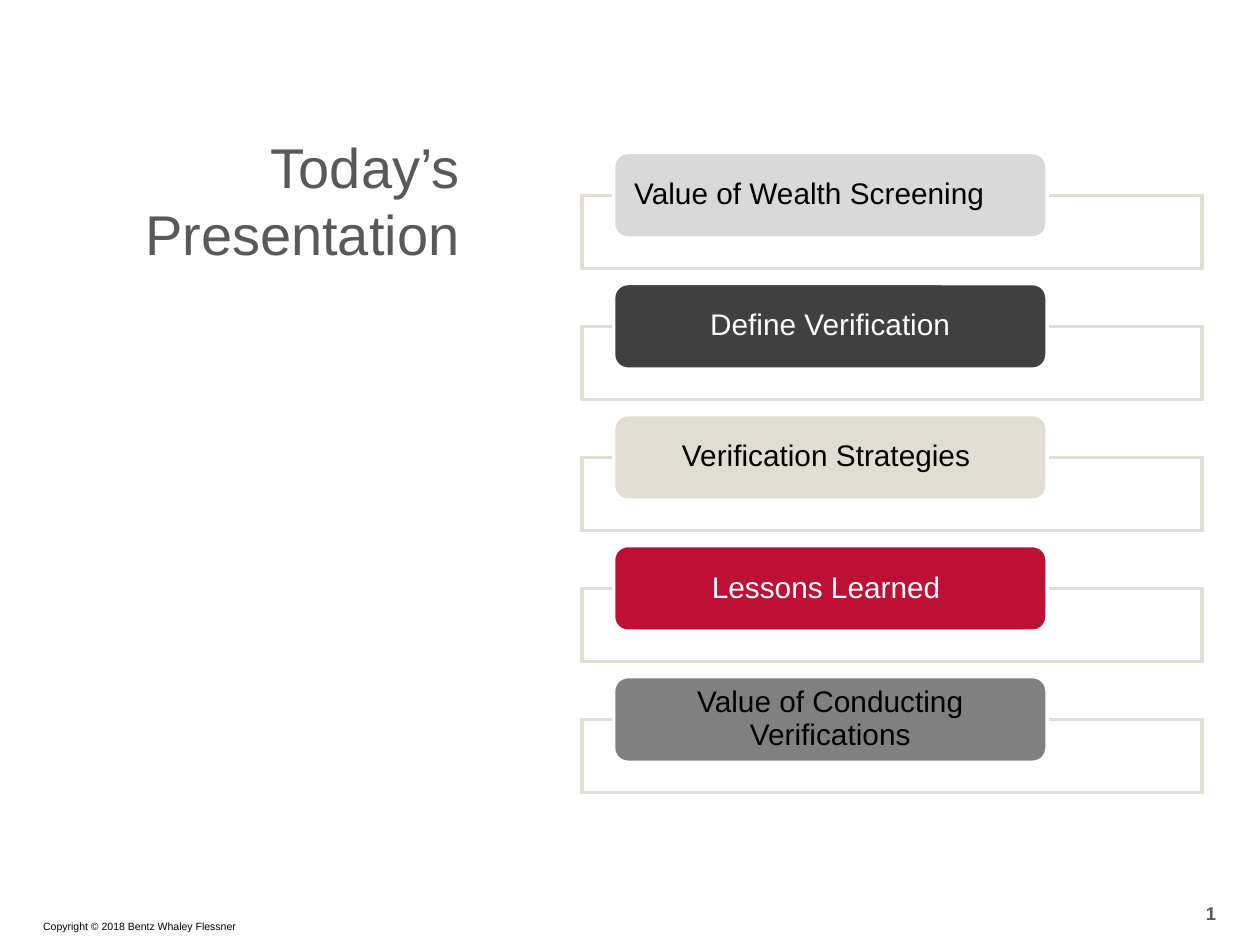
from lxml.etree import SubElement
from pptx import Presentation
from pptx.dml.color import RGBColor
from pptx.enum.shapes import MSO_SHAPE
from pptx.enum.text import MSO_ANCHOR, PP_ALIGN
from pptx.oxml.ns import qn
from pptx.util import Inches, Pt

TITLE = "Today’s Presentation"
COPYRIGHT = "Copyright © 2018 Bentz Whaley Flessner"
NUMBER = "2"
TOPICS = [
    ("Value of Wealth Screening", "silver", "black", PP_ALIGN.LEFT),
    ("Define Verification", "dark", "white", PP_ALIGN.CENTER),
    ("Verification Strategies ", "sand", "black", PP_ALIGN.CENTER),
    ("Lessons Learned ", "red", "white", PP_ALIGN.CENTER),
    ("Value of Conducting Verifications", "gray", "black", PP_ALIGN.CENTER),
]
THEME = {
    "font": "Arial",
    "color": {
        "black": "000000", "white": "FFFFFF", "text": "595959",
        "silver": "D9D9D9", "dark": "404040", "sand": "E1DDD2",
        "red": "BE0F34", "gray": "808080",
    },
    "size": {"title": 32, "topic": 17, "number": 10.5, "small": 6},
}
TOP, STEP = 1.21, 1.04
DROP = 0.34


def color(name):
    return RGBColor.from_string(THEME["color"][name])


def write(shape, text, size, ink="text", align=PP_ALIGN.RIGHT,
          anchor=MSO_ANCHOR.TOP, bold=False, pad=(0.1, 0.05), spacing=None):
    frame = shape.text_frame
    frame.word_wrap = True
    frame.vertical_anchor = anchor
    frame.margin_left = frame.margin_right = Inches(pad[0])
    frame.margin_top = frame.margin_bottom = Inches(pad[1])
    para = frame.paragraphs[0]
    para.alignment = align
    para.line_spacing = spacing
    run = para.add_run()
    run.text = text
    run.font.name = THEME["font"]
    run.font.size = Pt(THEME["size"][size])
    run.font.bold = bold
    run.font.color.rgb = color(ink)
    return run


def block(shapes, kind, box, fill, line):
    shape = shapes.add_shape(kind, *map(Inches, box))
    shape.shadow.inherit = False
    shape.fill.solid()
    shape.fill.fore_color.rgb = color(fill)
    shape.line.color.rgb = color(line)
    shape.line.width = Pt(2)
    return shape


def fade(shape, percent):
    tint = shape.fill._xPr.find(qn("a:solidFill"))[0]
    SubElement(tint, qn("a:alpha"), val=str(percent * 1000))


def main():
    deck = Presentation()
    deck.slide_width, deck.slide_height = Inches(10), Inches(7.5)
    slide = deck.slides.add_slide(deck.slide_layouts[5])
    shapes = slide.shapes

    title = shapes.title
    title.left, title.top = Inches(0.33), Inches(1)
    title.width, title.height = Inches(3.42), Inches(2.08)
    write(title, TITLE, "title")

    for i, (text, fill, ink, align) in enumerate(TOPICS):
        y = TOP + i * STEP
        frame = block(shapes, MSO_SHAPE.RECTANGLE,
                      (4.62, y + DROP, 4.92, 0.58), "white", "sand")
        fade(frame, 90)
        label = block(shapes, MSO_SHAPE.ROUNDED_RECTANGLE,
                      (4.87, y, 3.44, 0.68), fill, "white")
        write(label, text, "topic", ink=ink, align=align,
              anchor=MSO_ANCHOR.MIDDLE, pad=(0.13, 0), spacing=0.9)

    note = shapes.add_textbox(*map(Inches, (-0.45, 7.25, 2.42, 0.2)))
    write(note, COPYRIGHT, "small", ink="black")

    page = shapes.add_textbox(*map(Inches, (7.92, 7.08, 1.83, 0.33)))
    field = write(page, NUMBER, "number", bold=True,
                  anchor=MSO_ANCHOR.MIDDLE)._r
    field.tag = qn("a:fld")
    field.set("id", "{B6F15528-21DE-4FAA-801E-634DDDAF4B2B}")
    field.set("type", "slidenum")

    deck.save("out.pptx")


if __name__ == "__main__":
    main()
